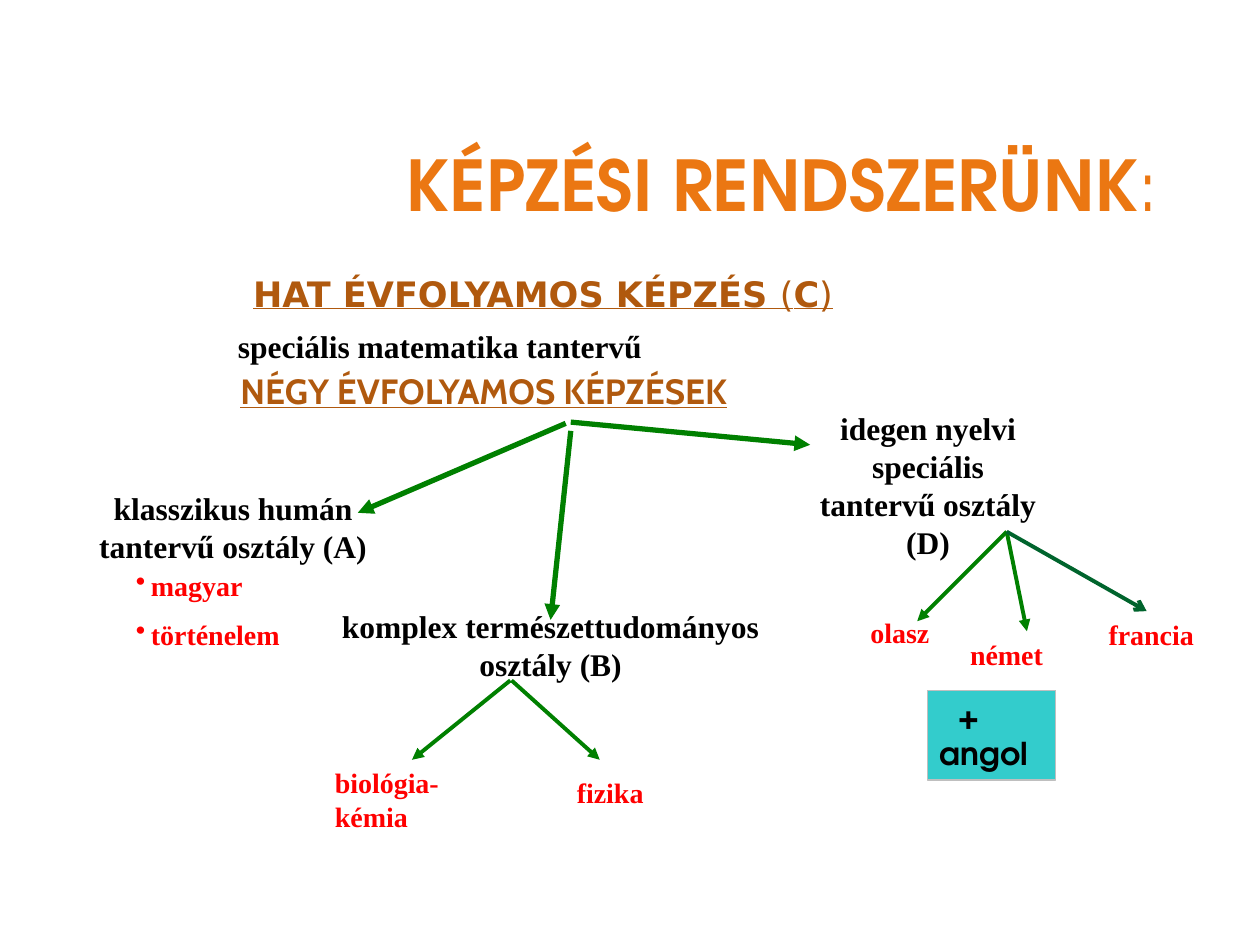
from dataclasses import dataclass

from lxml import etree
from pptx import Presentation
from pptx.dml.color import RGBColor
from pptx.enum.shapes import MSO_CONNECTOR as Connector, MSO_SHAPE as Shape
from pptx.enum.text import MSO_ANCHOR as Anchor, PP_ALIGN as Align
from pptx.oxml.ns import qn
from pptx.util import Inches, Pt


@dataclass(frozen=True)
class Style:
    font: str
    size: int
    color: str
    bold: bool = True
    underline: bool = False
    align: Align = Align.LEFT


class Theme:
    display, serif = "TeX Gyre Adventor", "Times New Roman"
    black, heading = "000000", "B0590E"
    green, dark_green = "008000", "00642D"
    box_fill, box_line = "33CCCC", "BFBFBF"
    main_arrow, small_arrow = 3, 2.25
    title = Style(display, 40, "EB7712", align=Align.RIGHT)
    six_year = Style("DejaVu Sans", 20, heading, underline=True, align=Align.CENTER)
    four_year = Style("Cabin", 20, heading, underline=True)
    programme = Style(serif, 18, black)
    branch = Style(serif, 18, black, align=Align.CENTER)
    subject = Style(serif, 16, "FF0000")
    extra = Style(display, 18, black)


# Content: headings as (text, bold) runs
TITLE = [("KÉPZÉSI RENDSZERÜNK", True), (":", False)]
SIX_YEAR = [("HAT ÉVFOLYAMOS KÉPZÉS ", True), ("(", False), ("C", True), (")", False)]

# Plain labels: text, left, top, width, height, style
LABELS = [
    ("NÉGY ÉVFOLYAMOS KÉPZÉSEK", 1.81, 2.88, 5, 0.44, Theme.four_year),
    ("klasszikus humán tantervű osztály (A)", 0.67, 3.83, 2.36, 0.7, Theme.branch),
    ("komplex természettudományos osztály (B)", 2.56, 4.77, 3.62, 0.71, Theme.branch),
    ("idegen nyelvi speciális tantervű osztály (D)", 6.34, 3.2, 2.05, 1.31, Theme.branch),
    ("biológia-kémia", 2.56, 6.03, 1.5, 0.64, Theme.subject),
    ("fizika", 4.48, 6.11, 1.02, 0.37, Theme.subject),
    ("olasz", 6.81, 4.84, 1.42, 0.37, Theme.subject),
    ("német", 7.6, 5.01, 1.18, 0.37, Theme.subject),
    ("francia", 8.7, 4.85, 1.03, 0.37, Theme.subject),
]
HUMANITIES = ["magyar", "történelem"]

# Arrows: start, end, colour, width, head
ARROWS = [
    ((4.49, 3.36), (2.84, 4.07), Theme.green, Theme.main_arrow, "triangle"),
    ((4.53, 3.42), (4.37, 4.92), Theme.green, Theme.main_arrow, "triangle"),
    ((4.53, 3.35), (6.43, 3.53), Theme.green, Theme.main_arrow, "triangle"),
    ((4.05, 5.4), (3.27, 6.03), Theme.green, Theme.small_arrow, "triangle"),
    ((4.06, 5.4), (4.76, 6.03), Theme.green, Theme.small_arrow, "triangle"),
    ((7.99, 4.22), (7.28, 4.93), Theme.green, Theme.small_arrow, "triangle"),
    ((7.99, 4.22), (8.15, 5.01), Theme.green, Theme.small_arrow, "triangle"),
    ((7.99, 4.22), (9.1, 4.85), Theme.dark_green, Theme.small_arrow, "arrow"),
]


def rgb(value):
    return RGBColor.from_string(value)


def format_run(run, style, bold):
    font = run.font
    font.name, font.size, font.bold = style.font, Pt(style.size), bold
    font.underline = style.underline
    font.color.rgb = rgb(style.color)


def write(shape, paragraphs, style):
    """Fill a shape with paragraphs, each a list of (text, bold) runs."""
    frame = shape.text_frame
    frame.word_wrap = True
    for index, runs in enumerate(paragraphs):
        paragraph = frame.add_paragraph() if index else frame.paragraphs[0]
        paragraph.alignment = style.align
        for text, bold in runs:
            run = paragraph.add_run()
            run.text = text
            format_run(run, style, bold)
    return frame


def add_text(slide, box, paragraphs, style):
    shape = slide.shapes.add_textbox(*map(Inches, box))
    return write(shape, paragraphs, style)


def set_indent(paragraph, margin, first=0.0):
    properties = paragraph._p.get_or_add_pPr()
    properties.set("marL", str(Inches(margin)))
    properties.set("indent", str(Inches(first)))
    return properties


def add_arrow(slide, start, end, color, width, head):
    arrow = slide.shapes.add_connector(Connector.STRAIGHT, *map(Inches, start + end))
    arrow.line.color.rgb = rgb(color)
    arrow.line.width = Pt(width)
    etree.SubElement(arrow.line._get_or_add_ln(), qn("a:tailEnd"), type=head)
    etree.SubElement(arrow._element.spPr, qn("a:effectLst"))


def main():
    presentation = Presentation()
    presentation.slide_width, presentation.slide_height = Inches(10), Inches(7.5)
    slide = presentation.slides.add_slide(presentation.slide_layouts[6])

    # Title and headings
    frame = add_text(slide, (0.79, 0.62, 8.5, 1.76), [TITLE], Theme.title)
    frame.vertical_anchor = Anchor.MIDDLE
    frame.paragraphs[0].line_spacing = 0.9
    add_text(slide, (1.81, 2.11, 5, 0.44), [SIX_YEAR], Theme.six_year)
    frame = add_text(slide, (1.54, 2.6, 4.24, 0.48),
                     [[("speciális matematika tantervű", True)]], Theme.programme)
    frame.paragraphs[0].line_spacing = 0.8
    set_indent(frame.paragraphs[0], 0.25)

    # Branches and subjects
    for text, *box, style in LABELS:
        add_text(slide, box, [[(text, True)]], style)

    # Bulleted humanities subjects
    frame = add_text(slide, (0.98, 4.46, 1.57, 0.77),
                     [[(text, True)] for text in HUMANITIES], Theme.subject)
    for paragraph in frame.paragraphs:
        properties = set_indent(paragraph, 0.12, -0.12)
        etree.SubElement(properties, qn("a:buChar"), char="•")
    frame.paragraphs[1].space_before = Pt(9)

    # Arrows
    for arrow in ARROWS:
        add_arrow(slide, *arrow)

    # English for every language class
    box = slide.shapes.add_shape(Shape.RECTANGLE, *map(Inches, (7.36, 5.48, 1.02, 0.71)))
    box.shadow.inherit = False
    box.fill.solid()
    box.fill.fore_color.rgb = rgb(Theme.box_fill)
    box.line.color.rgb = rgb(Theme.box_line)
    box.line.width = Pt(0.75)
    frame = write(box, [[("+", True)], [("angol", True)]], Theme.extra)
    frame.vertical_anchor = Anchor.TOP
    set_indent(frame.paragraphs[0], 0.14)

    presentation.save("out.pptx")


if __name__ == "__main__":
    main()
